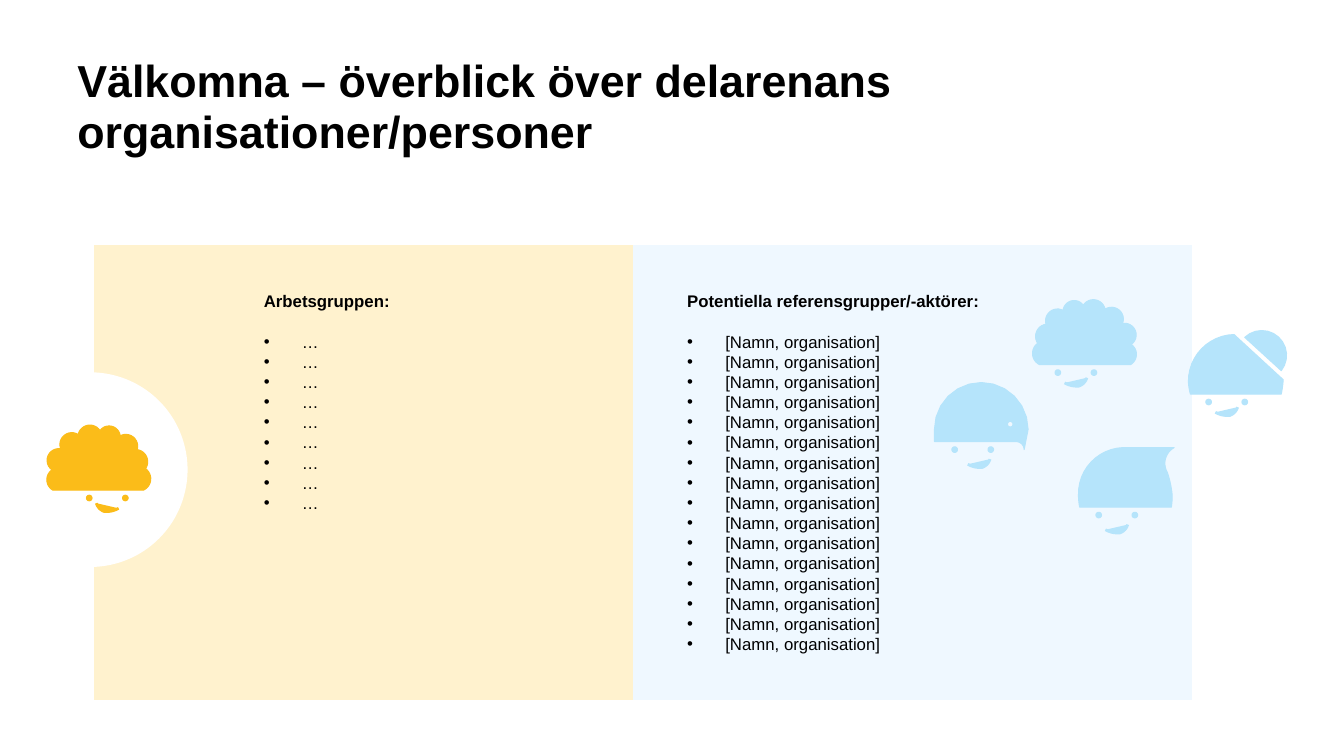
"""Build the overview slide with the working group and the potential reference groups."""
from math import atan, cos, sin

from lxml import etree
from pptx import Presentation
from pptx.dml.color import RGBColor
from pptx.enum.shapes import MSO_SHAPE as Preset
from pptx.enum.text import MSO_ANCHOR as Anchor
from pptx.oxml.ns import qn
from pptx.util import Cm, Pt

COLOURS = {"text": "000000", "white": "FFFFFF", "sand": "FFF2CE",
           "ice": "EFF8FF", "yellow": "FBBC19", "sky": "B5E4FB"}
COLOUR = {name: RGBColor.from_string(value) for name, value in COLOURS.items()}

presentation = Presentation()
presentation.slide_width, presentation.slide_height = Cm(33.87), Cm(19.05)
slide = presentation.slides.add_slide(presentation.slide_layouts[6])
shapes = slide.shapes


def write(text, items=(), box=(), size=12, anchor=Anchor.TOP, spacing=1.0):
    """Add a text box with a bold heading and an optional bullet list."""
    frame = shapes.add_textbox(*map(Cm, box)).text_frame
    frame.word_wrap = True
    frame.vertical_anchor = anchor
    for index, line in enumerate([text, *items]):
        paragraph = frame.paragraphs[0] if index == 0 else frame.add_paragraph()
        if index:
            properties = paragraph._p.get_or_add_pPr()
            properties.set("marL", str(Cm(0.96)))
            properties.set("indent", str(-Cm(0.96)))
            etree.SubElement(properties, qn("a:buFont")).set("typeface", "Arial")
            etree.SubElement(properties, qn("a:buChar")).set("char", "•")
        elif items:
            paragraph.space_after = Pt(14.4)
        paragraph.line_spacing = spacing
        run = paragraph.add_run()
        run.text = line
        run.font.name, run.font.size = "Arial", Pt(size)
        run.font.bold = index == 0
        run.font.color.rgb = COLOUR["text"]


def paint(shape, colour, line_width=0):
    """Give a shape one colour for fill and line, and no shadow."""
    shape.shadow.inherit = False
    shape.fill.solid()
    shape.fill.fore_color.rgb = COLOUR[colour]
    if line_width:
        shape.line.color.rgb = COLOUR[colour]
        shape.line.width = Pt(line_width)
    else:
        shape.line.fill.background()


panels = [(15.95, 14.09, "ice"), (2.37, 13.58, "sand")]
for left, width, colour in panels:
    panel = shapes.add_shape(Preset.FLOWCHART_PROCESS, Cm(left), Cm(6.18), Cm(width), Cm(11.45))
    paint(panel, colour)

write("Välkomna – överblick över delarenans organisationer/personer",
      box=(1.7, 2.14, 30.73, 1.98), size=32, anchor=Anchor.BOTTOM, spacing=0.95)
write("Arbetsgruppen:", ["…"] * 9, box=(6.4, 7.21, 9.55, 9.25))
write("Potentiella referensgrupper/-aktörer:", ["[Namn, organisation]"] * 16,
      box=(17.07, 7.21, 13.59, 11.84))

circle = shapes.add_shape(Preset.OVAL, Cm(-0.16), Cm(9.4), Cm(4.87), Cm(4.87))
paint(circle, "white", 1)

# Outlines hold x, y and the bulge of the arc to the next point, in cm from the left eye.
EYE_GAP, ARC_STEPS = 0.91, 12
EYES = [[(x - 0.07, 0, 1), (x + 0.07, 0, 1)] for x in (0, EYE_GAP)]
CURLS = [(1.83, -0.2, 0.55), (1.85, -0.71, 0.8), (1.63, -1.24, 0.73), (1.19, -1.6, 0.67),
         (0.64, -1.7, 0.68), (0.13, -1.57, 0.66), (-0.3, -1.22, 0.55), (-0.51, -0.74, 0.57),
         (-0.46, -0.2, 0)]
WHALE = [(1.75, 0, 0), (1.85, -0.51, 1), (-0.51, -0.51, 0), (-0.51, -0.2, 0),
         (1.55, -0.2, -0.41)]
WHALE_EYE = [(1.33, -0.64, 1), (1.47, -0.64, 1)]
WAVE = [(1.83, -0.2, 0.05), (1.85, -0.51, 0.06), (1.73, -1.07, -0.42), (1.9, -1.7, 0),
        (0.61, -1.7, 0.41), (-0.51, -0.51, 0.05), (-0.48, -0.2, 0)]
CAP = [(1.83, -0.2, 0.03), (1.88, -0.56, 0), (0.64, -1.7, 0.41), (-0.51, -0.51, 0.05),
       (-0.46, -0.2, 0)]
BALL = [(1.83, -0.79, 0.93), (0.91, -1.63, 0)]
MOUTH = [(0.17, 0.26, 0.15), (0.53, 0.34, 0.25), (0.73, 0.13, 0)]
LOW_MOUTH = [(x, y + 0.11, bulge) for x, y, bulge in MOUTH]
WHALE_MOUTH = [(x + 0.16, y, bulge) for x, y, bulge in LOW_MOUTH]

faces = [([EYES, [CURLS]], MOUTH, 2.25, 12.55, "yellow"),
         ([[WHALE, WHALE_EYE, *EYES]], WHALE_MOUTH, 24.06, 11.33, "sky"),
         ([[WAVE, *EYES]], LOW_MOUTH, 27.69, 12.98, "sky"),
         ([EYES, [CURLS]], MOUTH, 26.66, 9.39, "sky"),
         ([[CAP, BALL, *EYES]], MOUTH, 30.46, 10.13, "sky")]
for parts, mouth, eye_x, eye_y, colour in faces:
    for part in [*parts, [mouth]]:
        is_mouth = part == [mouth]
        builder = None
        for outline in part:
            points = []
            for (x, y, bulge), (next_x, next_y, _) in zip(outline, outline[1:] + outline[:1]):
                points.append((x, y))
                if bulge:
                    half_x, half_y = (next_x - x) / 2, (next_y - y) / 2
                    angle = 2 * atan(bulge)
                    for step in range(1, ARC_STEPS):
                        turn = angle * (2 * step / ARC_STEPS - 1)
                        along = sin(turn) / sin(angle)
                        across = (cos(turn) - cos(angle)) / sin(angle)
                        points.append((x + half_x * (1 + along) - half_y * across,
                                       y + half_y * (1 + along) + half_x * across))
            if colour == "yellow":
                points = [(EYE_GAP - x, y) for x, y in points]
            places = [(Cm(eye_x + x), Cm(eye_y + y)) for x, y in points]
            if builder is None:
                builder = shapes.build_freeform(*places[0])
            else:
                builder.move_to(*places[0])
            builder.add_line_segments(places[1:], close=not is_mouth)
        paint(builder.convert_to_shape(), colour, 2 if is_mouth else 0.75)

presentation.save("out.pptx")
